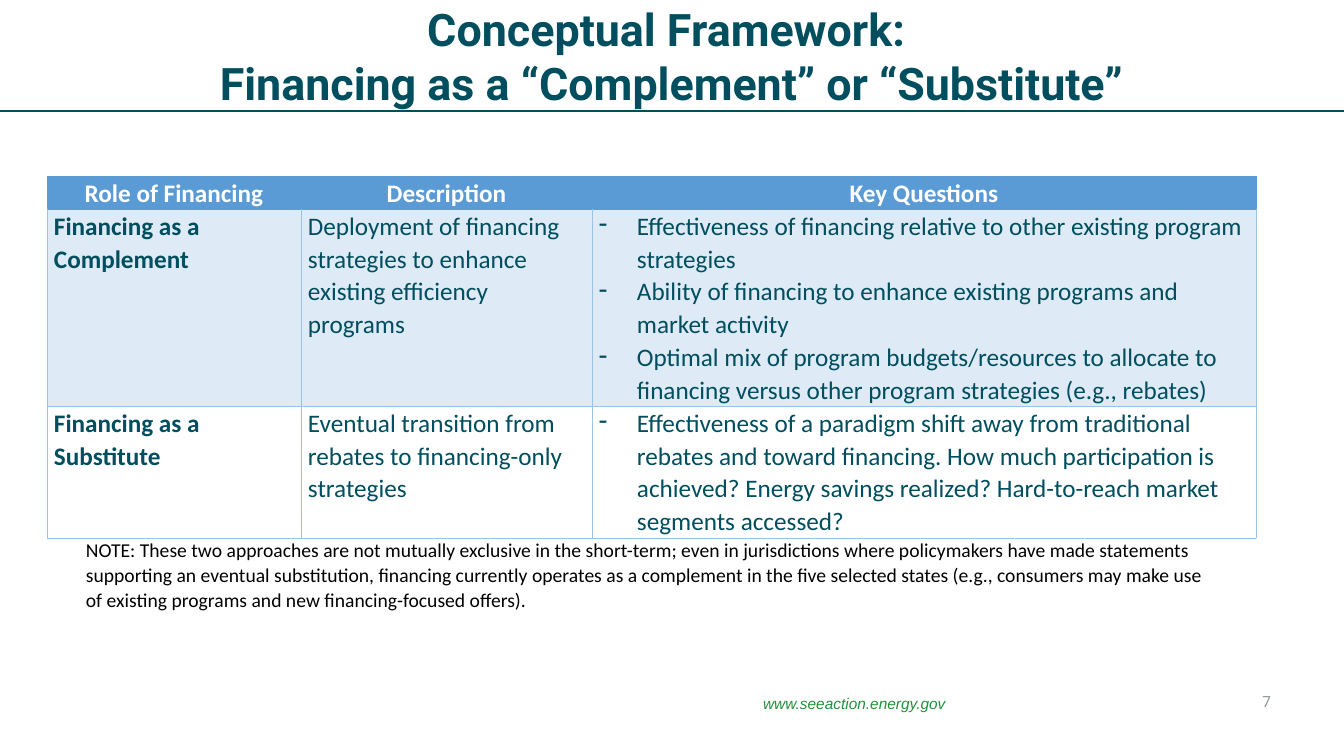
import dataclasses
import typing

import lxml.etree
import pptx
import pptx.dml.color
import pptx.enum.shapes
import pptx.enum.text
import pptx.oxml.ns
import pptx.util

RGB = pptx.dml.color.RGBColor
ALIGN = pptx.enum.text.PP_ALIGN
ANCHOR = pptx.enum.text.MSO_ANCHOR
qn = pptx.oxml.ns.qn

TEAL = RGB(0x00, 0x4E, 0x5E)
GREEN = RGB(0x23, 0x91, 0x3C)
GREY = RGB(0x8C, 0x97, 0x9D)
BLACK = RGB(0x00, 0x00, 0x00)
WHITE = RGB(0xFF, 0xFF, 0xFF)
BLUE = RGB(0x5B, 0x9B, 0xD5)
SKY = RGB(0x9C, 0xC2, 0xE5)
PALE = RGB(0xDE, 0xEA, 0xF6)

WIDE, HIGH = 1344, 756
RULE_Y = 111
COLS = (254, 291, 664)
INDENT = 38


@dataclasses.dataclass
class Style:
    font: str
    size: int
    color: RGB
    bold: bool = False
    italic: bool = False
    align: ALIGN = ALIGN.LEFT
    line: float = 1.0
    after: int = 0


@dataclasses.dataclass
class Label:
    box: tuple[int, int, int, int]
    text: str
    style: Style
    anchor: ANCHOR = ANCHOR.TOP


@dataclasses.dataclass
class Row:
    high: int
    edge: RGB
    fill: typing.Optional[RGB]
    cells: tuple[tuple[str, ...], ...]


HEAD = Style("Calibri", 18, WHITE, bold=True, align=ALIGN.CENTER, line=1.07)
BODY = Style("Calibri", 18, TEAL, line=1.07)
ROLE = dataclasses.replace(BODY, bold=True)

LABELS = (
    Label((651, 689, 407, 28), "www.seeaction.energy.gov",
          Style("Arial", 11, GREEN, italic=True, align=ALIGN.CENTER)),
    Label((0, 0, WIDE, RULE_Y),
          "Conceptual Framework: \vFinancing as a “Complement” or “Substitute”",
          Style("Roboto", 32, TEAL, bold=True, align=ALIGN.CENTER),
          ANCHOR.MIDDLE),
    Label((968, 681, 313, 40), "7",
          Style("Roboto", 11, GREY, align=ALIGN.RIGHT), ANCHOR.MIDDLE),
    Label((76, 531, 1152, 87),
          "NOTE: These two approaches are not mutually exclusive in the "
          "short-term; even in jurisdictions where policymakers have made "
          "statements supporting an eventual substitution, financing currently "
          "operates as a complement in the five selected states (e.g., "
          "consumers may make use of existing programs and new "
          "financing-focused offers).",
          Style("Calibri", 14, BLACK, line=1.07, after=8)),
)

ROWS = (
    Row(33, BLUE, BLUE,
        (("Role of Financing",), ("Description",), ("Key Questions",))),
    Row(197, SKY, PALE, (
        ("Financing as a Complement",),
        ("Deployment of financing strategies to enhance existing efficiency "
         "programs",),
        ("Effectiveness of financing relative to other existing program "
         "strategies",
         "Ability of financing to enhance existing programs and market activity",
         "Optimal mix of program budgets/resources to allocate to financing "
         "versus other program strategies (e.g., rebates)"))),
    Row(132, SKY, None, (
        ("Financing as a Substitute",),
        ("Eventual transition from rebates to financing-only strategies",),
        ("Effectiveness of a paradigm shift away from traditional rebates and "
         "toward financing. How much participation is achieved? Energy savings "
         "realized? Hard-to-reach market segments accessed?",))),
)


def px(count: int) -> pptx.util.Emu:
    return pptx.util.Emu(round(count * 914400 / 100.8))


def apply(target: typing.Any, values: dict[str, typing.Any]) -> None:
    for name, value in values.items():
        setattr(target, name, value)


def write(frame: typing.Any, lines: tuple[str, ...], style: Style,
          dash: bool = False) -> None:
    """Fill a text frame with one paragraph per line, dashed if asked."""
    for i, text in enumerate(lines):
        para = frame.add_paragraph() if i else frame.paragraphs[0]
        para.text = text
        apply(para, {"alignment": style.align, "line_spacing": style.line,
                     "space_after": pptx.util.Pt(style.after)})
        if dash:
            props = para._p.get_or_add_pPr()
            props.set("marL", str(px(INDENT)))
            props.set("indent", str(-px(INDENT)))
            lxml.etree.SubElement(props, qn("a:buChar"), char="-")
        for run in para.runs:
            apply(run.font, {"name": style.font, "bold": style.bold,
                             "size": pptx.util.Pt(style.size),
                             "italic": style.italic})
            run.font.color.rgb = style.color


def add_label(slide: typing.Any, label: Label) -> None:
    frame = slide.shapes.add_textbox(*map(px, label.box)).text_frame
    apply(frame, {"word_wrap": True, "vertical_anchor": label.anchor})
    write(frame, (label.text,), label.style)


def add_rule(slide: typing.Any) -> None:
    rule = slide.shapes.add_connector(
        pptx.enum.shapes.MSO_CONNECTOR.STRAIGHT,
        px(0), px(RULE_Y), px(WIDE), px(RULE_Y))
    rule.line.color.rgb = TEAL
    rule.line.width = pptx.util.Pt(1)
    lxml.etree.SubElement(rule._element.spPr, qn("a:effectLst"))


def set_edges(cell: typing.Any, edge: RGB, top: RGB) -> None:
    """Put the four borders ahead of the cell's fill, as the schema asks."""
    props = cell._tc.get_or_add_tcPr()
    sides = {"a:lnL": edge, "a:lnR": edge, "a:lnT": top, "a:lnB": edge}
    for i, (side, color) in enumerate(sides.items()):
        line = lxml.etree.Element(qn(side), w=str(pptx.util.Pt(1) // 2))
        fill = lxml.etree.SubElement(line, qn("a:solidFill"))
        lxml.etree.SubElement(fill, qn("a:srgbClr"), val=str(color))
        props.insert(i, line)


def add_grid(slide: typing.Any) -> None:
    size = (sum(COLS), sum(row.high for row in ROWS))
    table = slide.shapes.add_table(
        len(ROWS), len(COLS), px(47), px(176), *map(px, size)).table
    apply(table, {"first_row": False, "horz_banding": False})
    for col, wide in zip(table.columns, COLS):
        col.width = px(wide)
    top = ROWS[0].edge
    for r, row in enumerate(ROWS):
        table.rows[r].height = px(row.high)
        for c, lines in enumerate(row.cells):
            cell = table.cell(r, c)
            apply(cell, {"margin_left": px(7), "margin_right": px(7),
                         "margin_top": 0, "margin_bottom": 0})
            if row.fill is None:
                cell.fill.background()
            else:
                cell.fill.solid()
                cell.fill.fore_color.rgb = row.fill
            set_edges(cell, row.edge, top)
            style = HEAD if r == 0 else ROLE if c == 0 else BODY
            write(cell.text_frame, lines, style, dash=r > 0 and c == 2)
        top = row.edge


def main() -> None:
    deck = pptx.Presentation()
    apply(deck, {"slide_width": px(WIDE), "slide_height": px(HIGH)})
    slide = deck.slides.add_slide(deck.slide_layouts[6])
    add_rule(slide)
    for label in LABELS[:-1]:
        add_label(slide, label)
    add_grid(slide)
    add_label(slide, LABELS[-1])
    deck.save("out.pptx")


if __name__ == "__main__":
    main()
